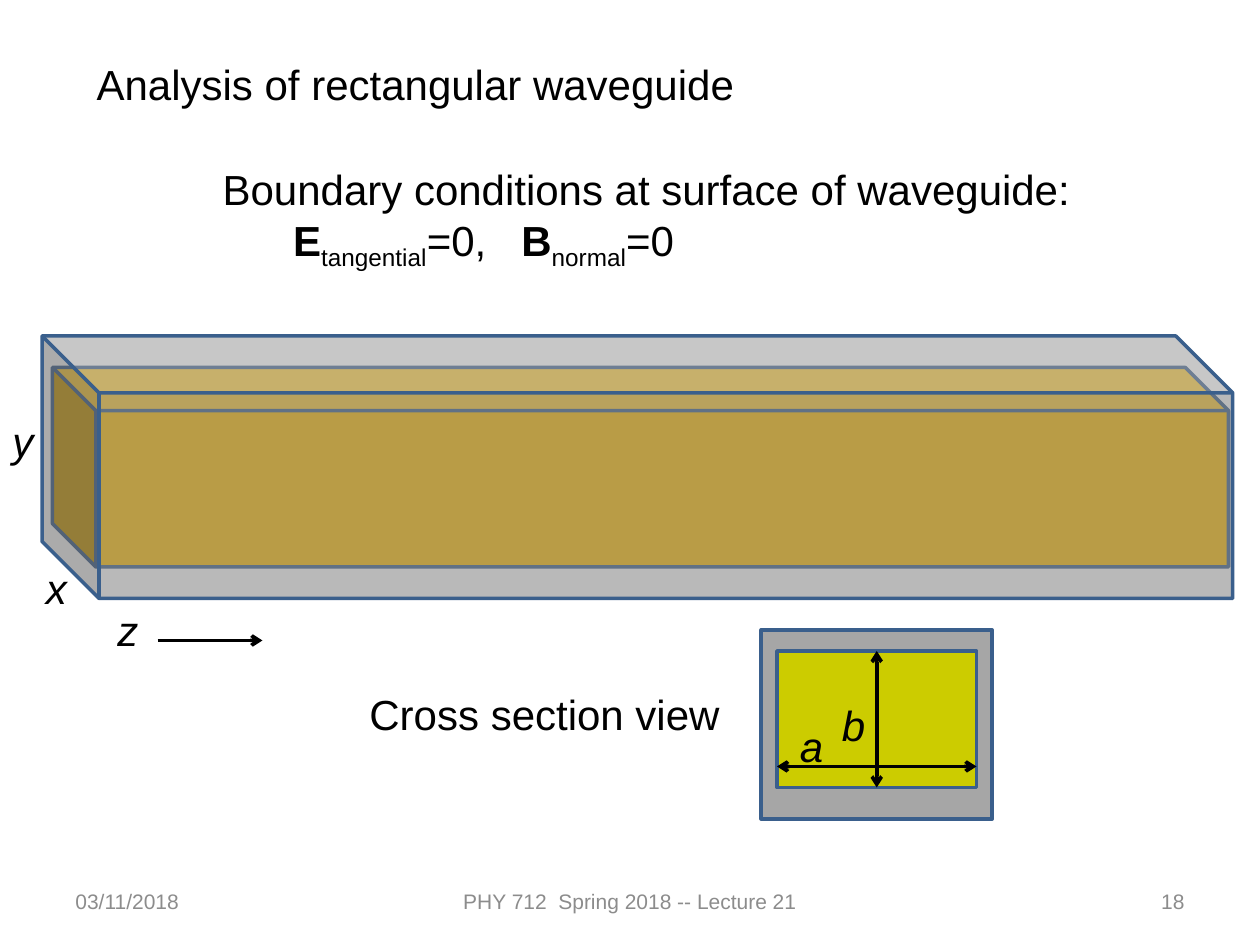
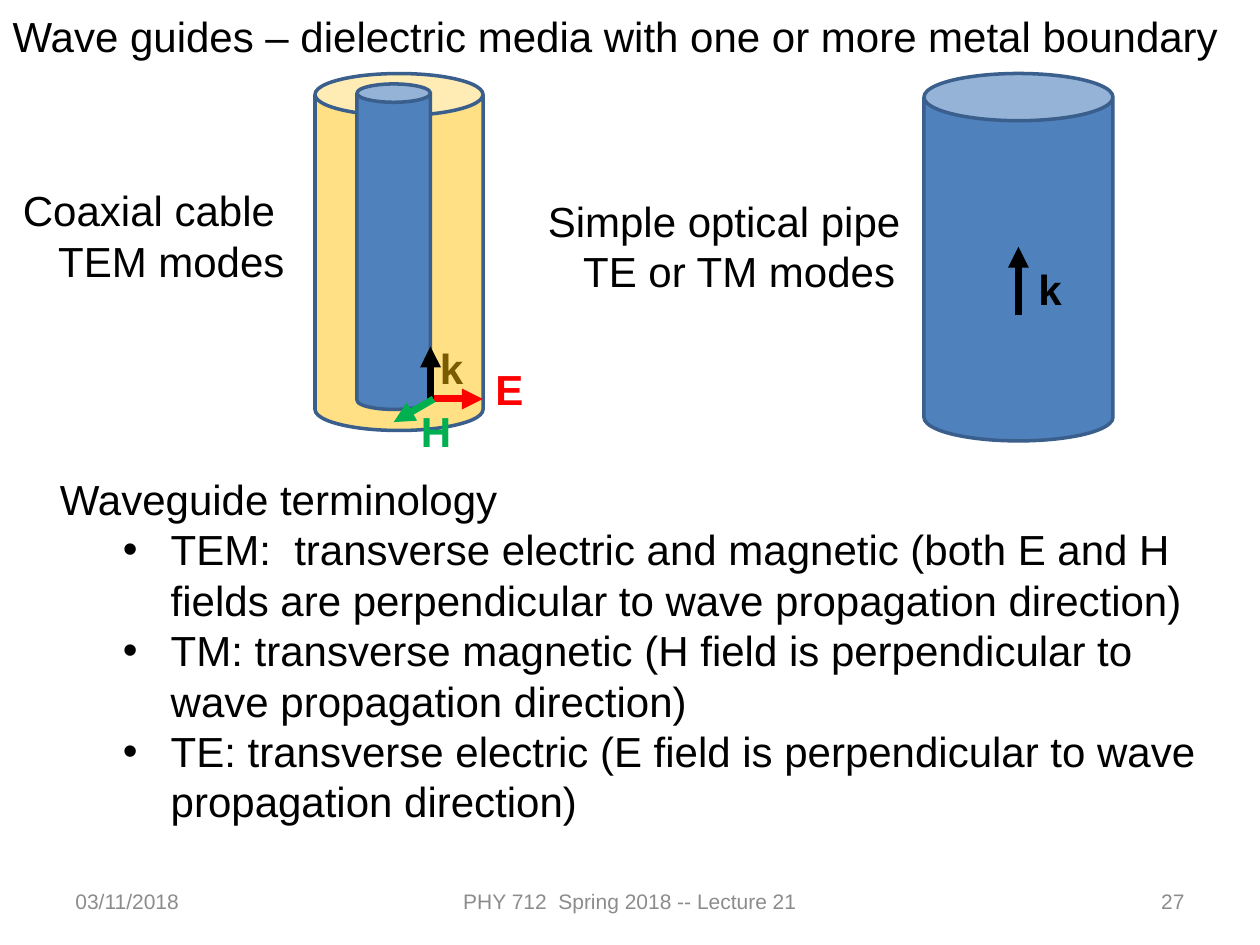
import lxml.etree
import pptx
import pptx.dml.color
import pptx.enum.shapes
import pptx.enum.text
import pptx.oxml.ns
import pptx.util

qn = pptx.oxml.ns.qn
Shape = pptx.enum.shapes.MSO_SHAPE
Align = pptx.enum.text.PP_ALIGN
Anchor = pptx.enum.text.MSO_ANCHOR

BLACK, GREY, OUTLINE = "000000", "8C8C8C", "3A5F8C"
BLUE, GOLD, RED, GREEN = "4F81BD", "FFC000", "FF0000", "00B050"
ITALIC, BOLD, SUBSCRIPT = {"italic": True}, {"bold": True}, {"baseline": -25000}
CUBE = {"adjustment": 0.217}
BULLET = (0.88, -0.38, "•")

presentation = pptx.Presentation()
presentation.slide_width = pptx.util.Inches(10)
presentation.slide_height = pptx.util.Inches(7.5)
column = presentation.slide_width / 120
row = presentation.slide_height / 90


def colour(target, value, alpha=100):
    target.rgb = pptx.dml.color.RGBColor.from_string(value)
    if alpha < 100:
        element = target._xFill.find(qn("a:srgbClr"))
        lxml.etree.SubElement(element, qn("a:alpha")).set("val", str(alpha * 1000))


def write(shape, place, paragraphs, look):
    left, top, width, height = place
    box = {"left": left * column, "top": top * row, "width": width * column, "height": height * row}
    for name, value in box.items():
        setattr(shape, name, round(value))
    frame_format = {
        "word_wrap": width > 6,
        "auto_size": pptx.enum.text.MSO_AUTO_SIZE.NONE,
        "vertical_anchor": look.get("anchor", Anchor.TOP),
    }
    for name, value in frame_format.items():
        setattr(shape.text_frame, name, value)
    for number, ((margin, indent, bullet), runs) in enumerate(paragraphs):
        paragraph = shape.text_frame.paragraphs[0] if number == 0 else shape.text_frame.add_paragraph()
        paragraph_format = {
            "alignment": look.get("alignment", Align.LEFT),
            "space_before": pptx.util.Pt(0),
            "level": 1 if bullet else 0,
        }
        for name, value in paragraph_format.items():
            setattr(paragraph, name, value)
        properties = paragraph._p.get_or_add_pPr()
        properties.set("marL", str(pptx.util.Inches(margin)))
        properties.set("indent", str(pptx.util.Inches(indent)))
        if bullet:
            lxml.etree.SubElement(properties, qn("a:buFont")).set("typeface", "Arial")
            lxml.etree.SubElement(properties, qn("a:buChar")).set("char", bullet)
        else:
            lxml.etree.SubElement(properties, qn("a:buNone"))
        for text, emphasis in runs:
            run = paragraph.add_run()
            run.text = text
            run_format = {
                "name": "Arial",
                "size": pptx.util.Pt(look.get("size", 24)),
                "bold": emphasis.get("bold", False),
                "italic": emphasis.get("italic", False),
            }
            for name, value in run_format.items():
                setattr(run.font, name, value)
            run.font.fill.solid()
            colour(run.font.fill.fore_color, look.get("colour", BLACK))
            if "baseline" in emphasis:
                run._r.get_or_add_rPr().set("baseline", str(emphasis["baseline"]))


PLAIN = (0, 0, "")
rectangular_waveguide = {
    "number": "18",
    "title": ("Analysis of rectangular waveguide", (8, 5, 86, 6)),
    "body_place": (20, 15, 96, 11),
    "body": [
        (PLAIN, [("Boundary conditions at surface of waveguide:", {})]),
        ((0.56, 0, ""), [
            ("E", BOLD), ("tangential", SUBSCRIPT), ("=0,   ", {}),
            ("B", BOLD), ("normal", SUBSCRIPT), ("=0", {}),
        ]),
    ],
    "covered_labels": [],
    "shapes": [
        (Shape.RECTANGLE, (72.5, 60, 22, 18), "A6A6A6", 100, {}),
        (Shape.RECTANGLE, (74, 62, 19, 13), "CCCC00", 100, {}),
        (Shape.CUBE, (5, 35, 112, 19), GOLD, 100, CUBE),
        (Shape.CUBE, (4, 32, 113.4, 25), "808080", 55, CUBE),
    ],
    "lines": [
        ((15, 61), (25, 61), BLACK, 2, "arrow", ["tailEnd"], None),
        ((74, 73), (93, 73), BLACK, 2, "arrow", ["headEnd", "tailEnd"], None),
        ((83.5, 75), (83.5, 62), BLACK, 2, "arrow", ["headEnd", "tailEnd"], 1),
    ],
    "labels": [
        ((10, 57, 30, 6), [(PLAIN, [("z", ITALIC)])], {}),
        ((3.2, 53, 30, 6), [(PLAIN, [("x", ITALIC)])], {}),
        ((0, 39, 30, 6), [(PLAIN, [("y", ITALIC)])], {}),
        ((34, 65, 37, 6), [(PLAIN, [("Cross section view", {})])], {}),
        ((79, 66, 30, 6), [(PLAIN, [("b", ITALIC)])], {}),
        ((75, 68, 30, 6), [(PLAIN, [("a", ITALIC)])], {}),
    ],
}

definitions = [
    "TEM:  transverse electric and magnetic (both E and H fields are perpendicular to wave propagation direction)",
    "TM: transverse magnetic (H field is perpendicular to wave propagation direction)",
    "TE: transverse electric (E field is perpendicular to wave propagation direction)",
]
wave_guides = {
    "number": "27",
    "title": ("Wave guides – dielectric media with one or more metal boundary", (0, 0.4, 118, 6)),
    "body_place": (4.5, 44.5, 111, 35),
    "body": [(PLAIN, [("Waveguide terminology", {})])] + [(BULLET, [(text, {})]) for text in definitions],
    "covered_labels": [((40.7, 32, 4.7, 6), [(PLAIN, [("k", BOLD)])], {})],
    "shapes": [
        (Shape.CAN, (30, 7, 16, 34), GOLD, 48, {}),
        (Shape.CAN, (34, 8, 7, 31), BLUE, 100, {}),
        (Shape.CAN, (88, 7, 18, 35), BLUE, 100, {}),
    ],
    "lines": [
        ((41, 38), (46, 38), RED, 4, "triangle", ["tailEnd"], None),
        ((41, 38), (41, 33), BLACK, 4, "triangle", ["tailEnd"], None),
        ((41.3, 38), (37.5, 40.2), GREEN, 4, "triangle", ["tailEnd"], None),
        ((97, 30), (97, 23.5), BLACK, 4, "triangle", ["tailEnd"], None),
    ],
    "labels": [
        ((1, 17, 31, 11), [(PLAIN, [("Coaxial cable", {})]), ((0.28, 0, ""), [("TEM modes", {})])], {}),
        ((51, 18, 43, 11), [(PLAIN, [("Simple optical pipe", {})]), ((0.28, 0, ""), [("TE or TM modes", {})])], {}),
        ((46, 34, 5.2, 6), [(PLAIN, [("E", BOLD)])], {"colour": RED}),
        ((38.9, 38, 5.4, 6), [(PLAIN, [("H", BOLD)])], {"colour": GREEN}),
        ((97.7, 24.5, 4.7, 6), [(PLAIN, [("k", BOLD)])], {}),
    ],
}

for content in (rectangular_waveguide, wave_guides):
    slide = presentation.slides.add_slide(presentation.slide_layouts[1])
    title, title_place = content["title"]
    write(slide.shapes.title, title_place, [(PLAIN, [(title, {})])], {})
    write(slide.placeholders[1], content["body_place"], content["body"], {})

    for place, paragraphs, look in content["covered_labels"]:
        write(slide.shapes.add_textbox(0, 0, 0, 0), place, paragraphs, look)

    drawn_shapes = []
    for kind, (left, top, width, height), fill, alpha, options in content["shapes"]:
        shape = slide.shapes.add_shape(
            kind, round(left * column), round(top * row), round(width * column), round(height * row)
        )
        shape.shadow.inherit = False
        shape.fill.solid()
        colour(shape.fill.fore_color, fill, alpha)
        shape.line.width = pptx.util.Pt(2)
        colour(shape.line.color, OUTLINE)
        if "adjustment" in options:
            shape.adjustments[0] = options["adjustment"]
            shape.rotation = 180
            shape.element.spPr.get_or_add_xfrm().set("flipV", "1")
        drawn_shapes.append(shape)

    for start, end, line_colour, weight, arrow, ends, joined in content["lines"]:
        connector = slide.shapes.add_connector(
            pptx.enum.shapes.MSO_CONNECTOR.STRAIGHT,
            round(start[0] * column), round(start[1] * row), round(end[0] * column), round(end[1] * row),
        )
        connector.line.width = pptx.util.Pt(weight)
        colour(connector.line.color, line_colour)
        for line_end in ends:
            lxml.etree.SubElement(connector.line._get_or_add_ln(), qn("a:" + line_end)).set("type", arrow)
        lxml.etree.SubElement(connector.element.spPr, qn("a:effectLst"))
        if joined is not None:
            connector.begin_connect(drawn_shapes[joined], 2)
            connector.end_connect(drawn_shapes[joined], 0)

    footers = [
        ("03/11/2018", 6, 28, Align.LEFT),
        ("PHY 712  Spring 2018 -- Lecture 21", 41, 38, Align.CENTER),
        (content["number"], 86, 28, Align.RIGHT),
    ]
    footer_labels = [
        ((left, 83.4, width, 4.8), [(PLAIN, [(text, {})])],
         {"size": 12, "colour": GREY, "anchor": Anchor.MIDDLE, "alignment": alignment})
        for text, left, width, alignment in footers
    ]
    for place, paragraphs, look in content["labels"] + footer_labels:
        write(slide.shapes.add_textbox(0, 0, 0, 0), place, paragraphs, look)

presentation.save("out.pptx")
